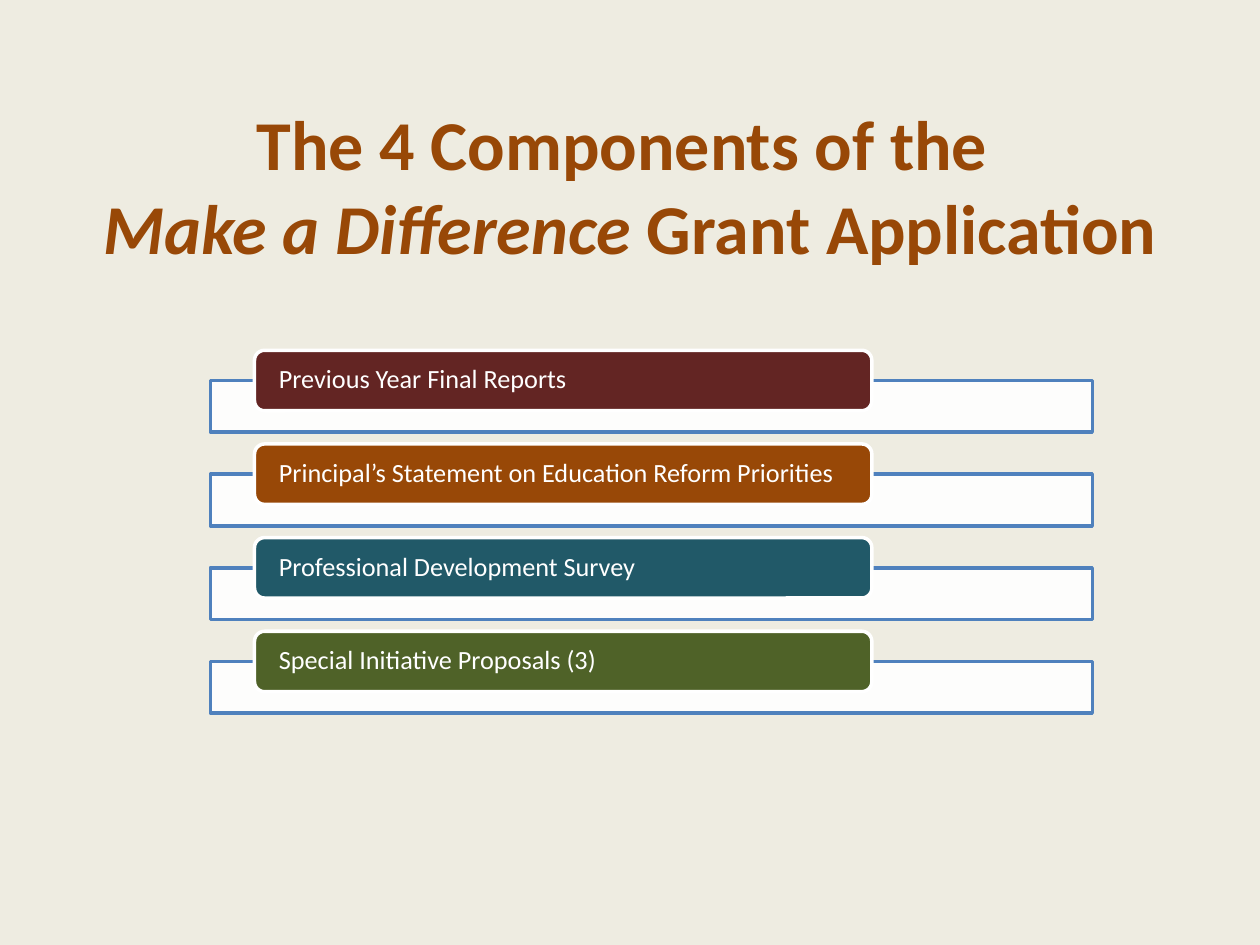
from lxml import etree
from pptx import Presentation
from pptx.dml.color import RGBColor
from pptx.enum import shapes, text
from pptx.oxml.ns import qn
from pptx.util import Inches, Pt


def colour(value):
    return RGBColor.from_string(value)


def add_block(kind, left, top, width, height, fill, line):
    block = page.shapes.add_shape(
        kind, Inches(left), Inches(top), Inches(width), Inches(height))
    block.shadow.inherit = False
    block.fill.solid()
    block.fill.fore_color.rgb = colour(fill)
    block.line.color.rgb = colour(line)
    block.line.width = Pt(2)
    return block


deck = Presentation()
deck.slide_width, deck.slide_height = Inches(10), Inches(7.5)
page = deck.slides.add_slide(deck.slide_layouts.get_by_name("Title Only"))
page.background.fill.solid()
page.background.fill.fore_color.rgb = colour("EEECE1")

# Title, with the programme name in italics
title = page.shapes.title
title.left, title.top = Inches(0), Inches(0.75)
title.width, title.height = Inches(10), Inches(1.45)
title.text_frame.word_wrap = True
title.text_frame.auto_size = text.MSO_AUTO_SIZE.SHAPE_TO_FIT_TEXT
title.text_frame.vertical_anchor = text.MSO_ANCHOR.TOP
title_lines = [
    [("The 4 Components of the ", False)],
    [("Make a Difference", True), (" Grant Application", False)],
]
for number, line in enumerate(title_lines):
    para = title.text_frame.paragraphs[0] if number == 0 else title.text_frame.add_paragraph()
    para.alignment = text.PP_ALIGN.CENTER
    for words, italic in line:
        span = para.add_run()
        span.text = words
        span.font.name = "Calibri"
        span.font.size = Pt(40)
        span.font.bold = True
        span.font.italic = italic
        span.font.color.rgb = colour("984807")

# Four components: a coloured label overlapping an outlined panel
components = [
    ("Previous Year Final Reports", "632523"),
    ("Principal’s Statement on Education Reform Priorities", "984807"),
    ("Professional Development Survey", "215968"),
    ("Special Initiative Proposals (3)", "4F6228"),
]
first_top, last_top = 2.78, 5.01
pitch = (last_top - first_top) / (len(components) - 1)
for number, (words, fill) in enumerate(components):
    top = first_top + number * pitch

    panel = add_block(shapes.MSO_SHAPE.RECTANGLE, 1.67, top + 0.24, 7, 0.41,
                      "FFFFFF", "4F81BD")
    panel_colour = panel.fill._xPr.find(qn("a:solidFill"))[0]
    etree.SubElement(panel_colour, qn("a:alpha"), val="90000")

    label = add_block(shapes.MSO_SHAPE.ROUNDED_RECTANGLE, 2.02, top, 4.9, 0.48,
                      fill, "FFFFFF")
    frame = label.text_frame
    frame.word_wrap = True
    frame.vertical_anchor = text.MSO_ANCHOR.MIDDLE
    frame.margin_left = frame.margin_right = Inches(0.17)
    frame.margin_top = frame.margin_bottom = 0
    para = frame.paragraphs[0]
    para.alignment = text.PP_ALIGN.LEFT
    para.line_spacing = 0.9
    span = para.add_run()
    span.text = words
    span.font.name = "Calibri"
    span.font.size = Pt(15)
    span.font.color.rgb = colour("FFFFFF")

deck.save("out.pptx")
